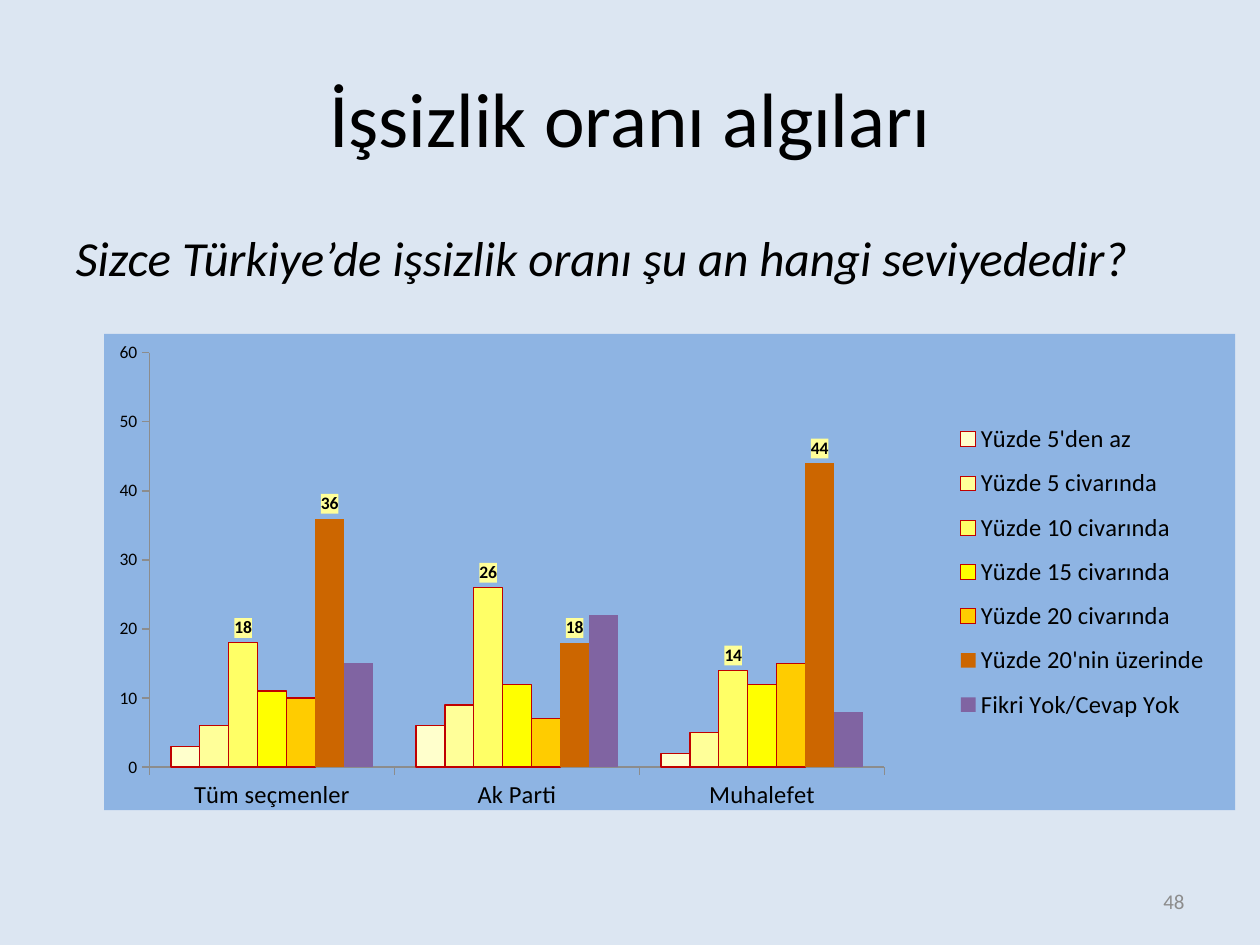
from lxml import etree
from pptx import Presentation
from pptx.chart.data import CategoryChartData
from pptx.dml.color import RGBColor
from pptx.enum.chart import XL_CHART_TYPE as ChartType
from pptx.enum.chart import XL_LABEL_POSITION as LabelPosition
from pptx.enum.chart import XL_LEGEND_POSITION as LegendPosition
from pptx.enum.chart import XL_TICK_MARK as TickMark
from pptx.enum.text import MSO_ANCHOR as Anchor
from pptx.enum.text import PP_ALIGN as Align
from pptx.oxml import parse_xml
from pptx.oxml.ns import nsdecls, qn
from pptx.util import Cm, Pt

BACKGROUND = RGBColor(0xDC, 0xE6, 0xF2)
CHART_FILL = RGBColor(0x8E, 0xB4, 0xE3)
BLACK = RGBColor(0x00, 0x00, 0x00)
GREY = RGBColor(0x8C, 0x8C, 0x8C)
RED = RGBColor(0xC0, 0x00, 0x00)
CREAM = RGBColor(0xFF, 0xFF, 0xCC)
PALE_YELLOW = RGBColor(0xFF, 0xFF, 0x99)
LIGHT_YELLOW = RGBColor(0xFF, 0xFF, 0x66)
YELLOW = RGBColor(0xFF, 0xFF, 0x00)
AMBER = RGBColor(0xFF, 0xCC, 0x00)
BROWN = RGBColor(0xCC, 0x66, 0x00)
PURPLE = RGBColor(0x80, 0x64, 0xA2)
FONT = "Calibri"

CATEGORIES = ["Tüm seçmenler", "Ak Parti", "Muhalefet"]
# name, values, fill, outlined, labelled
SERIES = [
    ("Yüzde 5'den az", (3, 6, 2), CREAM, True, False),
    ("Yüzde 5 civarında", (6, 9, 5), PALE_YELLOW, True, False),
    ("Yüzde 10 civarında", (18, 26, 14), LIGHT_YELLOW, True, True),
    ("Yüzde 15 civarında", (11, 12, 12), YELLOW, True, False),
    ("Yüzde 20 civarında", (10, 7, 15), AMBER, True, False),
    ("Yüzde 20'nin üzerinde", (36, 18, 44), BROWN, False, True),
    ("Fikri Yok/Cevap Yok", (15, 22, 8), PURPLE, False, False),
]


def format_font(font, size, color=BLACK, bold=False, italic=False):
    font.name = FONT
    font.size = Pt(size)
    font.color.rgb = color
    font.bold = bold
    font.italic = italic


def write_text(shape, text, align=Align.LEFT, anchor=Anchor.TOP, **font_format):
    frame = shape.text_frame
    frame.word_wrap = True
    frame.vertical_anchor = anchor
    paragraph = frame.paragraphs[0]
    paragraph.alignment = align
    run = paragraph.add_run()
    run.text = text
    format_font(run.font, **font_format)
    return paragraph


def place(shape, box):
    shape.left, shape.top, shape.width, shape.height = box


def add_title(slide, box, text):
    place(slide.shapes.title, box)
    write_text(slide.shapes.title, text, Align.CENTER, Anchor.MIDDLE, size=44)


def add_question(slide, box, text):
    body = slide.placeholders[1]
    place(body, box)
    paragraph = write_text(body, text, size=28, italic=True)
    paragraph.space_before = Pt(5.6)
    properties = paragraph._p.get_or_add_pPr()
    properties.set("marL", "0")
    properties.set("indent", "0")
    etree.SubElement(properties, qn("a:buNone"))


def add_page_number(slide, box, text):
    write_text(slide.shapes.add_textbox(*box), text, Align.RIGHT, Anchor.MIDDLE,
               size=12, color=GREY)


def solid_fill(color):
    return parse_xml(
        f'<c:spPr {nsdecls("c", "a")}><a:solidFill><a:srgbClr val="{color}"/>'
        "</a:solidFill><a:ln><a:noFill/></a:ln></c:spPr>")


def set_layout(element, index, left, top, width, height, inner=False):
    for old in element.findall(qn("c:layout")):
        element.remove(old)
    target = '<c:layoutTarget val="inner"/>' if inner else ""
    element.insert(index, parse_xml(
        f'<c:layout {nsdecls("c")}><c:manualLayout>{target}'
        '<c:xMode val="edge"/><c:yMode val="edge"/>'
        f'<c:x val="{left}"/><c:y val="{top}"/><c:w val="{width}"/><c:h val="{height}"/>'
        "</c:manualLayout></c:layout>"))


def format_series(series, color, outlined, labelled):
    series.invert_if_negative = False
    series.format.fill.solid()
    series.format.fill.fore_color.rgb = color
    if outlined:
        series.format.line.color.rgb = RED
        series.format.line.width = Pt(0.75)
    else:
        series.format.line.fill.background()
    if labelled:
        labels = series.data_labels
        labels.show_value = True
        labels.number_format = "0"
        labels.number_format_is_linked = False
        labels.position = LabelPosition.OUTSIDE_END
        format_font(labels.font, 10, bold=True)
        labels._element.find(qn("c:numFmt")).addnext(solid_fill(PALE_YELLOW))


def format_axis(axis, size, number_format):
    axis.has_major_gridlines = False
    axis.major_tick_mark = TickMark.OUTSIDE
    axis.minor_tick_mark = TickMark.NONE
    axis.format.line.color.rgb = GREY
    axis.tick_labels.number_format = number_format
    axis.tick_labels.number_format_is_linked = False
    format_font(axis.tick_labels.font, size)


def add_perception_chart(slide, box):
    data = CategoryChartData(number_format="0")
    data.categories = CATEGORIES
    for name, values, *_ in SERIES:
        data.add_series(name, values)
    chart = slide.shapes.add_chart(ChartType.COLUMN_CLUSTERED, *box, data).chart
    chart.has_title = False
    format_font(chart.font, 10)
    chart._chartSpace.find(qn("c:chart")).addnext(solid_fill(CHART_FILL))

    plot = chart.plots[0]
    plot.gap_width = 150
    plot.overlap = 0
    plot.vary_by_categories = False
    for series, (_, _, *style) in zip(plot.series, SERIES):
        format_series(series, *style)

    format_axis(chart.category_axis, 14, "General")
    format_axis(chart.value_axis, 10, "0")
    chart.value_axis.minimum_scale = 0
    chart.value_axis.maximum_scale = 60
    chart.value_axis.major_unit = 10

    chart.has_legend = True
    legend = chart.legend
    legend.position = LegendPosition.RIGHT
    legend.include_in_layout = False
    format_font(legend.font, 14)
    set_layout(legend._element, 1, 0.75, 0.16, 0.23, 0.68)
    plot_area = chart._chartSpace.chart.plotArea
    set_layout(plot_area, 0, 0.04, 0.04, 0.65, 0.87, inner=True)


def main():
    presentation = Presentation()
    presentation.slide_width = Cm(25.4)
    presentation.slide_height = Cm(19.05)
    slide = presentation.slides.add_slide(presentation.slide_layouts[1])
    slide.background.fill.solid()
    slide.background.fill.fore_color.rgb = BACKGROUND

    margin, content_width = Cm(1.27), Cm(22.86)
    add_title(slide, (margin, Cm(0.76), content_width, Cm(3.18)),
              "İşsizlik oranı algıları")
    add_question(slide, (margin, Cm(4.45), content_width, Cm(12.57)),
                 "Sizce Türkiye’de işsizlik oranı şu an hangi seviyededir?")
    add_page_number(slide, (Cm(18.2), Cm(17.65), Cm(5.93), Cm(1.02)), "48")
    add_perception_chart(slide, (Cm(2.1), Cm(6.73), Cm(22.8), Cm(9.6)))
    presentation.save("out.pptx")


if __name__ == "__main__":
    main()
